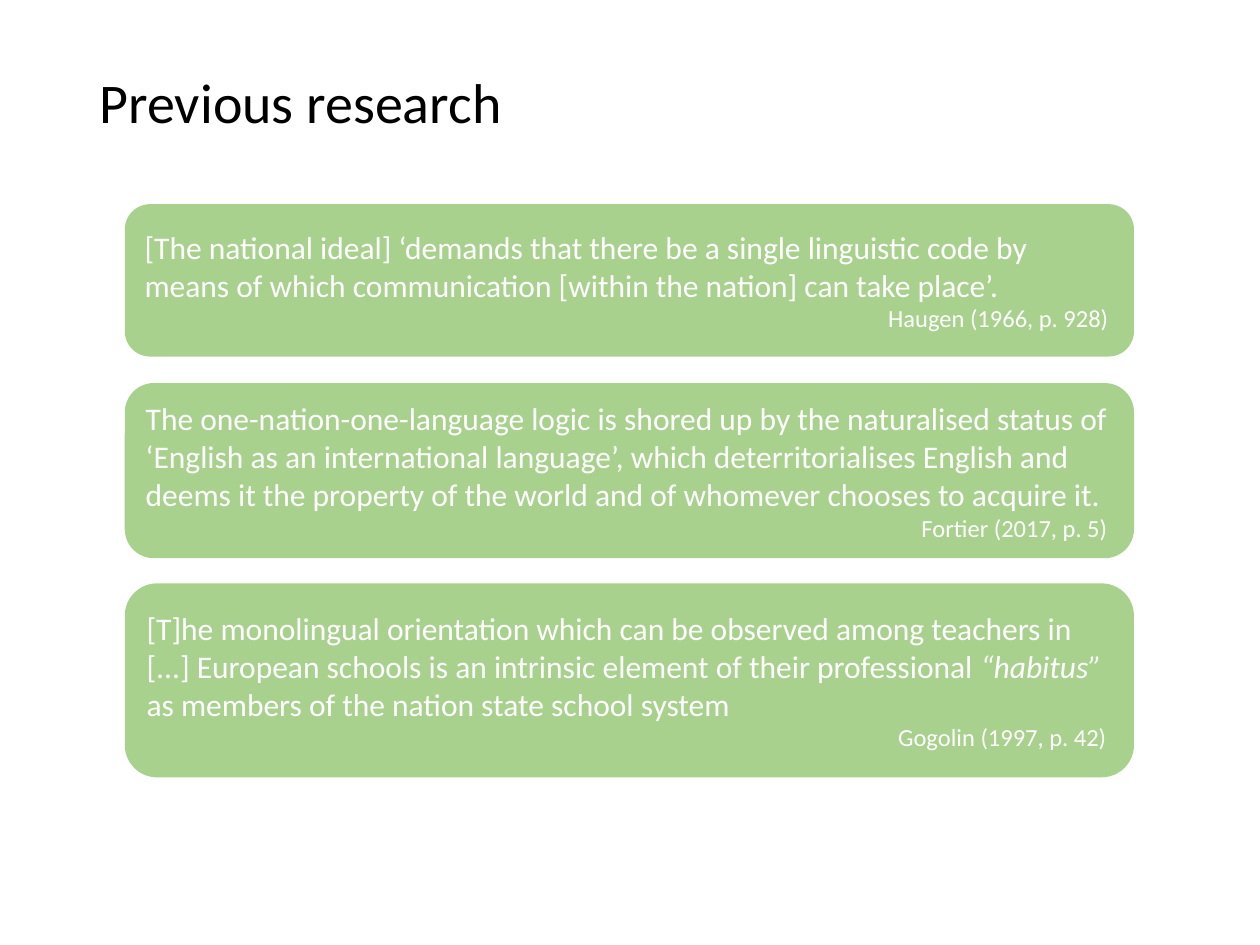
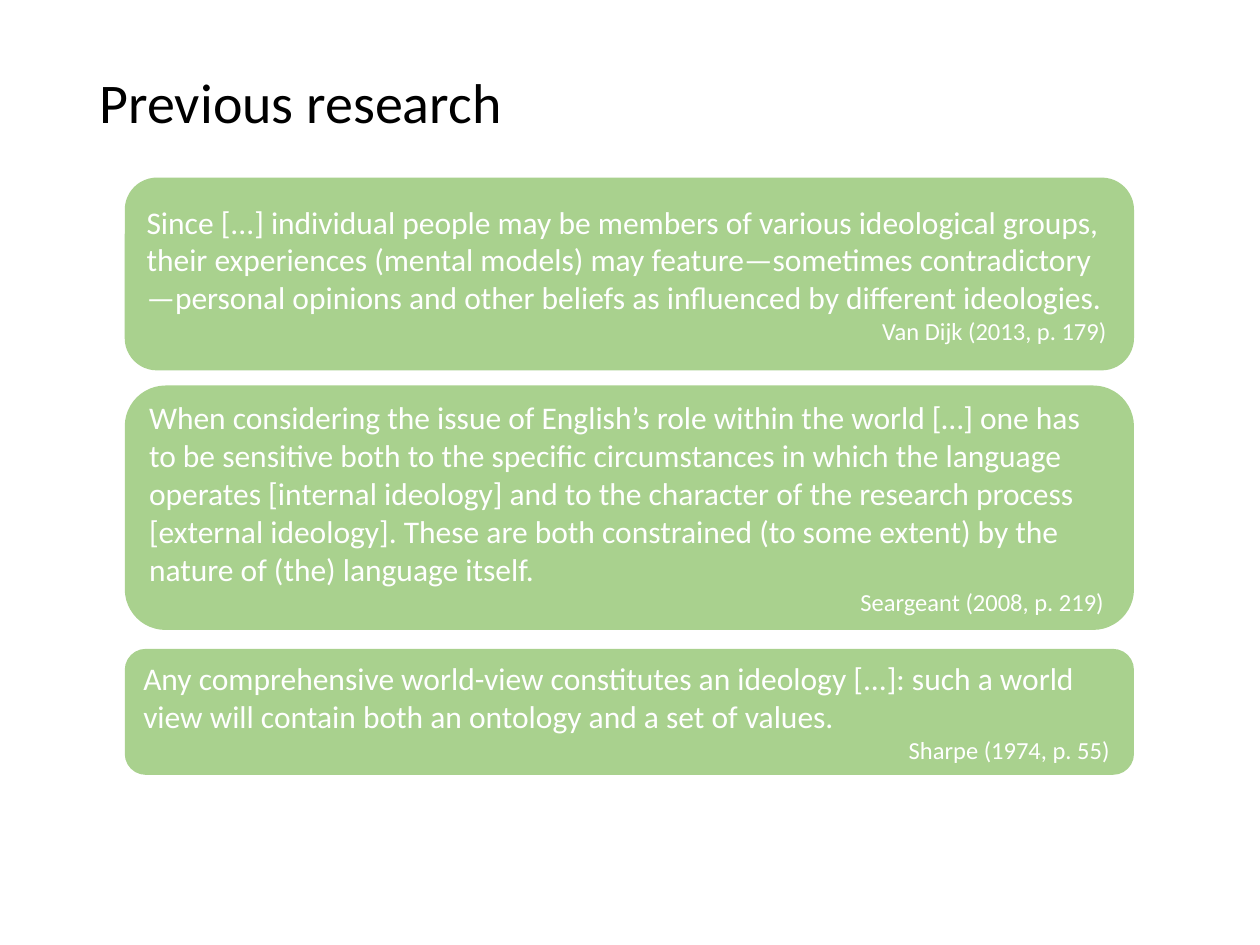
from dataclasses import dataclass

import pptx
import pptx.dml.color
import pptx.enum.shapes
import pptx.enum.text
import pptx.util
from pptx.util import Inches

COLORS = {"title": "000000", "card": "A9D18E", "quote": "FFFFFF"}
FONT = "Calibri"
TITLE = "Previous research"
CARD_LEFT, CARD_WIDTH = 0.99, 8.01
ALIGN = pptx.enum.text.PP_ALIGN


@dataclass(frozen=True)
class Quote:
    top: float
    height: float
    runs: tuple[tuple[str, bool], ...]
    source: str


SLIDES = [
    [
        Quote(1.62, 1.21, (
            ("[The national ideal] ‘demands that there be a single linguistic code by "
             "means of which communication [within the nation] can take place’.", False),
        ), "Haugen (1966, p. 928) "),
        Quote(3.04, 1.39, (
            ("The one-nation-one-language logic is shored up by the naturalised status of "
             "‘English as an international language’, which deterritorialises English and "
             "deems it the property of the world and of whomever chooses to acquire it.", False),
        ), "Fortier (2017, p. 5) "),
        Quote(4.63, 1.54, (
            ("[T]he monolingual orientation which can be observed among teachers in [...] "
             "European schools is an intrinsic element of their professional ", False),
            ("“habitus” ", True),
            ("as members of the nation state school system", False),
        ), "Gogolin (1997, p. 42) "),
    ],
    [
        Quote(1.41, 1.53, (
            ("Since [...] individual people may be members of various ideological groups, "
             "their experiences (mental models) may feature—sometimes contradictory—personal "
             "opinions and other beliefs as influenced by different ideologies.", False),
        ), "Van Dijk (2013, p. 179) "),
        Quote(3.06, 1.94, (
            ("When considering the issue of English’s role within the world […] one has to be "
             "sensitive both to the specific circumstances in which the language operates "
             "[internal ideology] and to the character of the research process [external "
             "ideology]. These are both constrained (to some extent) by the nature of (the) "
             "language itself.", False),
        ), "Seargeant (2008, p. 219) "),
        Quote(5.15, 1, (
            ("Any comprehensive world-view constitutes an ideology [...]: such a world view "
             "will contain both an ontology and a set of values.", False),
        ), "Sharpe (1974, p. 55) "),
    ],
]


def rgb(name: str) -> pptx.dml.color.RGBColor:
    return pptx.dml.color.RGBColor.from_string(COLORS[name])


def add_text(p, text: str, *, size: float, color: str, italic: bool = False,
             align=ALIGN.LEFT) -> None:
    p.alignment = align
    r = p.add_run()
    r.text = text
    r.font.name = FONT
    r.font.size = pptx.util.Pt(size)
    r.font.italic = italic
    r.font.color.rgb = rgb(color)


def add_title(slide, text: str) -> None:
    sp = slide.shapes.title
    sp.left, sp.top = Inches(0.69), Inches(0.4)
    sp.width, sp.height = Inches(8.62), Inches(0.87)
    tf = sp.text_frame
    tf.vertical_anchor = pptx.enum.text.MSO_ANCHOR.MIDDLE
    p = tf.paragraphs[0]
    p.line_spacing = 0.9
    add_text(p, text, size=32, color="title")


def add_quote(slide, quote: Quote) -> None:
    sp = slide.shapes.add_shape(
        pptx.enum.shapes.MSO_SHAPE.ROUNDED_RECTANGLE,
        Inches(CARD_LEFT), Inches(quote.top), Inches(CARD_WIDTH), Inches(quote.height))
    sp.shadow.inherit = False
    sp.fill.solid()
    sp.fill.fore_color.rgb = rgb("card")
    sp.line.fill.background()
    tf = sp.text_frame
    tf.word_wrap = True
    tf.vertical_anchor = pptx.enum.text.MSO_ANCHOR.MIDDLE
    for text, italic in quote.runs:
        add_text(tf.paragraphs[0], text, size=18, color="quote", italic=italic)
    add_text(tf.add_paragraph(), quote.source, size=14, color="quote", align=ALIGN.RIGHT)


def main() -> None:
    prs = pptx.Presentation()
    prs.slide_width, prs.slide_height = Inches(10), Inches(7.5)
    title_only = prs.slide_layouts.get_by_name("Title Only")
    for quotes in SLIDES:
        slide = prs.slides.add_slide(title_only)
        add_title(slide, TITLE)
        for quote in quotes:
            add_quote(slide, quote)
    prs.save("out.pptx")


if __name__ == "__main__":
    main()
